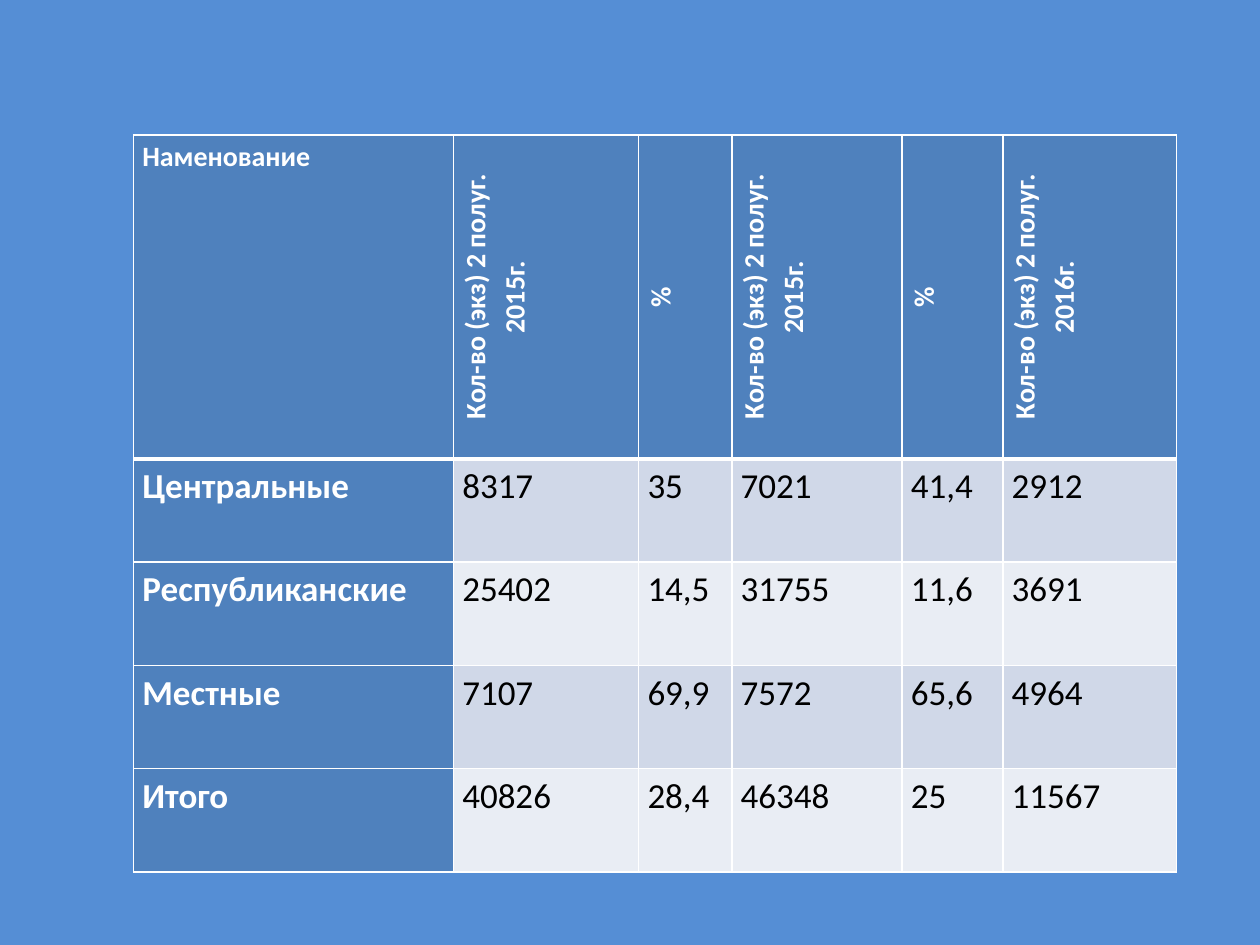
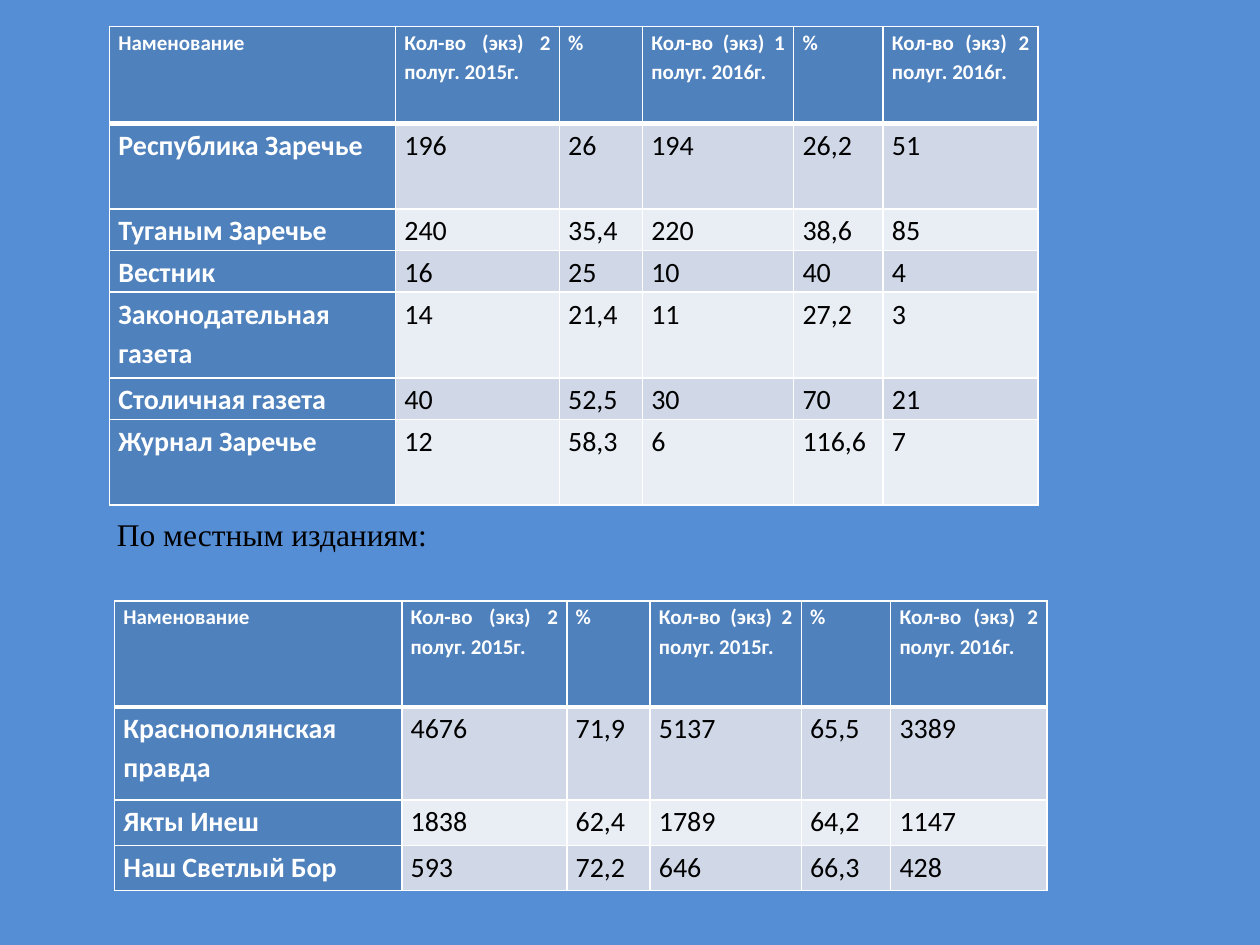
from dataclasses import dataclass

from lxml import etree
from pptx import Presentation
from pptx.dml.color import RGBColor
from pptx.enum.text import MSO_ANCHOR, PP_ALIGN
from pptx.oxml.ns import qn
from pptx.util import Inches, Pt

JUSTIFY, CENTER = PP_ALIGN.JUSTIFY, PP_ALIGN.CENTER
TOP, MIDDLE = MSO_ANCHOR.TOP, MSO_ANCHOR.MIDDLE


@dataclass(frozen=True)
class Theme:
    background: str = "558ED5"
    accent: str = "4F81BD"
    bands: tuple[str, str] = ("D0D8E8", "E9EDF4")
    light: str = "FFFFFF"
    dark: str = "000000"
    table_font: str = "Calibri"
    caption_font: str = "Times New Roman"
    caption_size: int = 18
    line_spacing: float = 1.15
    thin: int = 1
    thick: int = 3


@dataclass(frozen=True)
class CirculationTable:
    left: float
    top: float
    cols: tuple[float, ...]
    row_heights: tuple[float, ...]
    periods: tuple[str, str, str]
    rows: tuple[tuple[str, ...], ...]
    header_size: int = 12
    body_size: int = 16
    vertical_header: bool = False

    @property
    def header(self) -> tuple[str, ...]:
        first, second, third = (f"Кол-во (экз) {p}" for p in self.periods)
        return "Наменование", first, "%", second, "%", third


THEME = Theme()
H2_2015, H1_2016, H2_2016 = "2 полуг. 2015г.", "1 полуг. 2016г.", "2 полуг. 2016г."

SUMMARY = CirculationTable(
    1.06, 1.07, (2.54, 1.47, 0.74, 1.35, 0.8, 1.38), (1.92,) + (0.82,) * 4,
    (H2_2015, H2_2015, H2_2016),
    (
        ("Центральные", "8317", "35", "7021", "41,4", "2912"),
        ("Республиканские", "25402", "14,5", "31755", "11,6", "3691"),
        ("Местные", "7107", "69,9", "7572", "65,6", "4964"),
        ("Итого", "40826", "28,4", "46348", "25", "11567"),
    ),
    header_size=16, body_size=20, vertical_header=True,
)
NATIONAL = CirculationTable(
    0.87, 0.21, (2.27, 1.3, 0.66, 1.2, 0.71, 1.23),
    (0.77, 0.68, 0.33, 0.33, 0.68, 0.33, 0.68),
    (H2_2015, H1_2016, H2_2016),
    (
        ("Республика Заречье", "196", "26", "194", "26,2", "51"),
        ("Туганым Заречье", "240", "35,4", "220", "38,6", "85"),
        ("Вестник", "16", "25", "10", "40", "4"),
        ("Законодательная газета", "14", "21,4", "11", "27,2", "3"),
        ("Столичная газета", "40", "52,5", "30", "70", "21"),
        ("Журнал Заречье", "12", "58,3", "6", "116,6", "7"),
    ),
)
LOCAL = CirculationTable(
    0.91, 4.77, (2.28, 1.31, 0.66, 1.2, 0.71, 1.24), (0.84, 0.74, 0.36, 0.36),
    (H2_2015, H2_2015, H2_2016),
    (
        ("Краснополянская правда", "4676", "71,9", "5137", "65,5", "3389"),
        ("Якты Инеш", "1838", "62,4", "1789", "64,2", "1147"),
        ("Наш Светлый Бор", "593", "72,2", "646", "66,3", "428"),
    ),
)


def rgb(value: str) -> RGBColor:
    return RGBColor.from_string(value)


def add_slide(prs):
    slide = prs.slides.add_slide(prs.slide_layouts[6])
    fill = slide.background.fill
    fill.solid()
    fill.fore_color.rgb = rgb(THEME.background)
    return slide


def set_borders(cell, row: int) -> None:
    """White grid, with a thick rule between header and body."""
    widths = {"lnL": THEME.thin, "lnR": THEME.thin,
              "lnT": THEME.thick if row == 1 else THEME.thin,
              "lnB": THEME.thick if row == 0 else THEME.thin}
    tc_pr = cell._tc.get_or_add_tcPr()
    for side, width in widths.items():
        ln = etree.SubElement(tc_pr, qn(f"a:{side}"), w=str(Pt(width)))
        solid = etree.SubElement(ln, qn("a:solidFill"))
        etree.SubElement(solid, qn("a:srgbClr"), val=THEME.light)


def style_cell(cell, text: str, row: int, col: int, spec_table: CirculationTable) -> None:
    is_header, is_label = row == 0, row == 0 or col == 0
    rotated = is_header and col > 0 and spec_table.vertical_header
    set_borders(cell, row)
    cell.fill.solid()
    cell.fill.fore_color.rgb = rgb(THEME.accent if is_label else THEME.bands[(row - 1) % 2])
    cell.margin_left = cell.margin_right = Inches(0.07)
    cell.margin_top = cell.margin_bottom = 0
    cell.vertical_anchor = MIDDLE if rotated else TOP
    if rotated:
        cell._tc.get_or_add_tcPr().set("vert", "vert270")

    cell.text = text
    p = cell.text_frame.paragraphs[0]
    p.alignment = CENTER if rotated else JUSTIFY
    p.line_spacing = THEME.line_spacing
    p.font.name = THEME.table_font
    p.font.size = Pt(spec_table.header_size if is_header else spec_table.body_size)
    p.font.bold = is_label
    p.font.color.rgb = rgb(THEME.light if is_label else THEME.dark)


def add_circulation_table(slide, data: CirculationTable) -> None:
    lines = (data.header, *data.rows)
    table = slide.shapes.add_table(
        len(lines), len(data.cols), Inches(data.left), Inches(data.top),
        Inches(sum(data.cols)), Inches(sum(data.row_heights))).table
    for column, width in zip(table.columns, data.cols):
        column.width = Inches(width)
    for row, height in zip(table.rows, data.row_heights):
        row.height = Inches(height)
    for i, line in enumerate(lines):
        for j, text in enumerate(line):
            style_cell(table.cell(i, j), text, i, j, data)


def add_caption(slide, text: str, left: float, top: float, width: float, height: float) -> None:
    tf = slide.shapes.add_textbox(
        Inches(left), Inches(top), Inches(width), Inches(height)).text_frame
    tf.word_wrap = True
    tf.vertical_anchor = MIDDLE
    p = tf.paragraphs[0]
    p.text = text
    p.font.name = THEME.caption_font
    p.font.size = Pt(THEME.caption_size)
    p.font.color.rgb = rgb(THEME.dark)


def main() -> None:
    prs = Presentation()
    prs.slide_width, prs.slide_height = Inches(10), Inches(7.5)

    # Totals by type of publication
    add_circulation_table(add_slide(prs), SUMMARY)

    # National and local publications
    slide = add_slide(prs)
    add_circulation_table(slide, NATIONAL)
    add_circulation_table(slide, LOCAL)
    add_caption(slide, "По местным изданиям:", 0.83, 3.99, 10, 0.5)

    prs.save("out.pptx")


if __name__ == "__main__":
    main()
